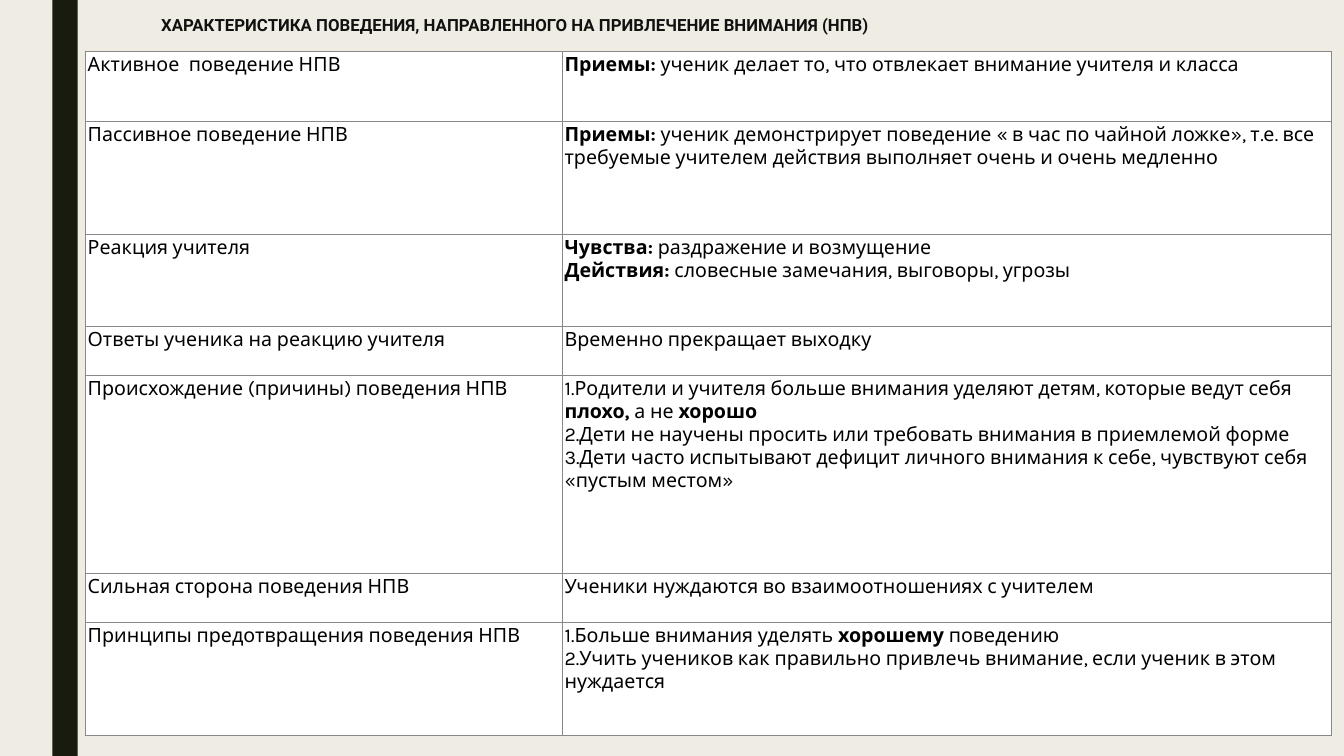
from lxml import etree
from pptx import Presentation
from pptx.dml.color import RGBColor
from pptx.enum.shapes import MSO_SHAPE
from pptx.enum.text import MSO_ANCHOR, PP_ALIGN
from pptx.oxml.ns import qn
from pptx.util import Inches, Pt

RECT = MSO_SHAPE.RECTANGLE
TOP = MSO_ANCHOR.TOP
LEFT = PP_ALIGN.LEFT

COLORS = {
    "background": "EFEDE3",
    "stripe": "191B0E",
    "title": "111111",
    "text": "000000",
    "cell": "FFFFFF",
    "border": "888888",
}
TITLE = "ХАРАКТЕРИСТИКА ПОВЕДЕНИЯ, НАПРАВЛЕННОГО НА ПРИВЛЕЧЕНИЕ ВНИМАНИЯ (НПВ)"
COL_WIDTHS = (4.73, 7.63)

# Row height, label, paragraphs (bold between asterisks), numbered or not
ROWS = [
    (0.7, "Активное  поведение НПВ",
     ["*Приемы:* ученик делает то, что отвлекает внимание учителя и класса"], False),
    (1.12, "Пассивное поведение НПВ",
     ["*Приемы:* ученик демонстрирует поведение « в час по чайной ложке», т.е. все "
      "требуемые учителем действия выполняет очень и очень медленно"], False),
    (0.91, "Реакция учителя",
     ["*Чувства:* раздражение и возмущение",
      "*Действия:* словесные замечания, выговоры, угрозы"], False),
    (0.49, "Ответы ученика на реакцию учителя", ["Временно прекращает выходку"], False),
    (1.96, "Происхождение (причины) поведения НПВ",
     ["Родители и учителя больше внимания уделяют детям, которые ведут "
      "себя *плохо,* а не *хорошо*",
      "Дети не научены просить или требовать внимания в приемлемой форме",
      "Дети часто испытывают дефицит личного внимания к себе, чувствуют себя "
      "«пустым местом»"], True),
    (0.49, "Сильная сторона поведения НПВ",
     ["Ученики нуждаются во взаимоотношениях с учителем"], False),
    (1.12, "Принципы предотвращения поведения НПВ",
     ["Больше внимания уделять *хорошему* поведению",
      "Учить учеников как правильно привлечь внимание, если ученик в этом нуждается"],
     True),
]


def rgb(name):
    return RGBColor.from_string(COLORS[name])


def add_run(p, text, font, size, color, bold=False):
    r = p.add_run()
    r.text = text
    r.font.name = font
    r.font.size = Pt(size)
    r.font.bold = bold
    r.font.color.rgb = rgb(color)


def number_paragraph(p):
    pPr = p._p.get_or_add_pPr()
    pPr.set("marL", "0")
    pPr.set("indent", "0")
    etree.SubElement(pPr, qn("a:buFont"), typeface="+mj-lt")
    etree.SubElement(pPr, qn("a:buAutoNum"), type="arabicPeriod")


def add_borders(cell):
    tcPr = cell._tc.get_or_add_tcPr()
    for side in ("lnL", "lnR", "lnT", "lnB"):
        ln = etree.SubElement(tcPr, qn(f"a:{side}"), w=str(Pt(0.75)))
        fill = etree.SubElement(ln, qn("a:solidFill"))
        etree.SubElement(fill, qn("a:srgbClr"), val=COLORS["border"])


def fill_cell(cell, paragraphs, numbered=False):
    add_borders(cell)
    cell.fill.solid()
    cell.fill.fore_color.rgb = rgb("cell")
    cell.margin_left = cell.margin_right = Inches(0.02)
    cell.margin_top = cell.margin_bottom = Inches(0.02)
    cell.vertical_anchor = TOP
    tf = cell.text_frame
    for i, text in enumerate(paragraphs):
        p = tf.add_paragraph() if i else tf.paragraphs[0]
        p.alignment = LEFT
        if numbered:
            number_paragraph(p)
        for j, part in enumerate(text.split("*")):
            if part:
                add_run(p, part, "Karla", 14, "text", bold=j % 2 == 1)


def add_stripe(s, x, y, w, h):
    sp = s.shapes.add_shape(RECT, Inches(x), Inches(y), Inches(w), Inches(h))
    sp.shadow.inherit = False
    sp.fill.solid()
    sp.fill.fore_color.rgb = rgb("stripe")
    sp.line.fill.background()


def add_title(s, x, y, w, h):
    tf = s.shapes.add_textbox(Inches(x), Inches(y), Inches(w), Inches(h)).text_frame
    tf.word_wrap = True
    tf.vertical_anchor = TOP
    p = tf.paragraphs[0]
    p.alignment = LEFT
    p.line_spacing = 0.89
    add_run(p, TITLE, "Roboto", 12, "title", bold=True)


def add_behaviour_table(s, x, y, w, h):
    table = s.shapes.add_table(len(ROWS), len(COL_WIDTHS), Inches(x), Inches(y),
                               Inches(w), Inches(h)).table
    table.first_row = table.horz_banding = False
    for col, width in zip(table.columns, COL_WIDTHS):
        col.width = Inches(width)
    for i, (height, label, paragraphs, numbered) in enumerate(ROWS):
        table.rows[i].height = Inches(height)
        fill_cell(table.cell(i, 0), [label])
        fill_cell(table.cell(i, 1), paragraphs, numbered)


def main():
    prs = Presentation()
    prs.slide_width, prs.slide_height = Inches(13.33), Inches(7.5)
    s = prs.slides.add_slide(prs.slide_layouts[6])
    s.background.fill.solid()
    s.background.fill.fore_color.rgb = rgb("background")
    add_stripe(s, 0.52, 0, 0.25, 7.5)
    add_title(s, 1.5, 0.12, 10.5, 0.33)
    add_behaviour_table(s, 0.85, 0.51, sum(COL_WIDTHS), sum(row[0] for row in ROWS))
    prs.save("out.pptx")


if __name__ == "__main__":
    main()
